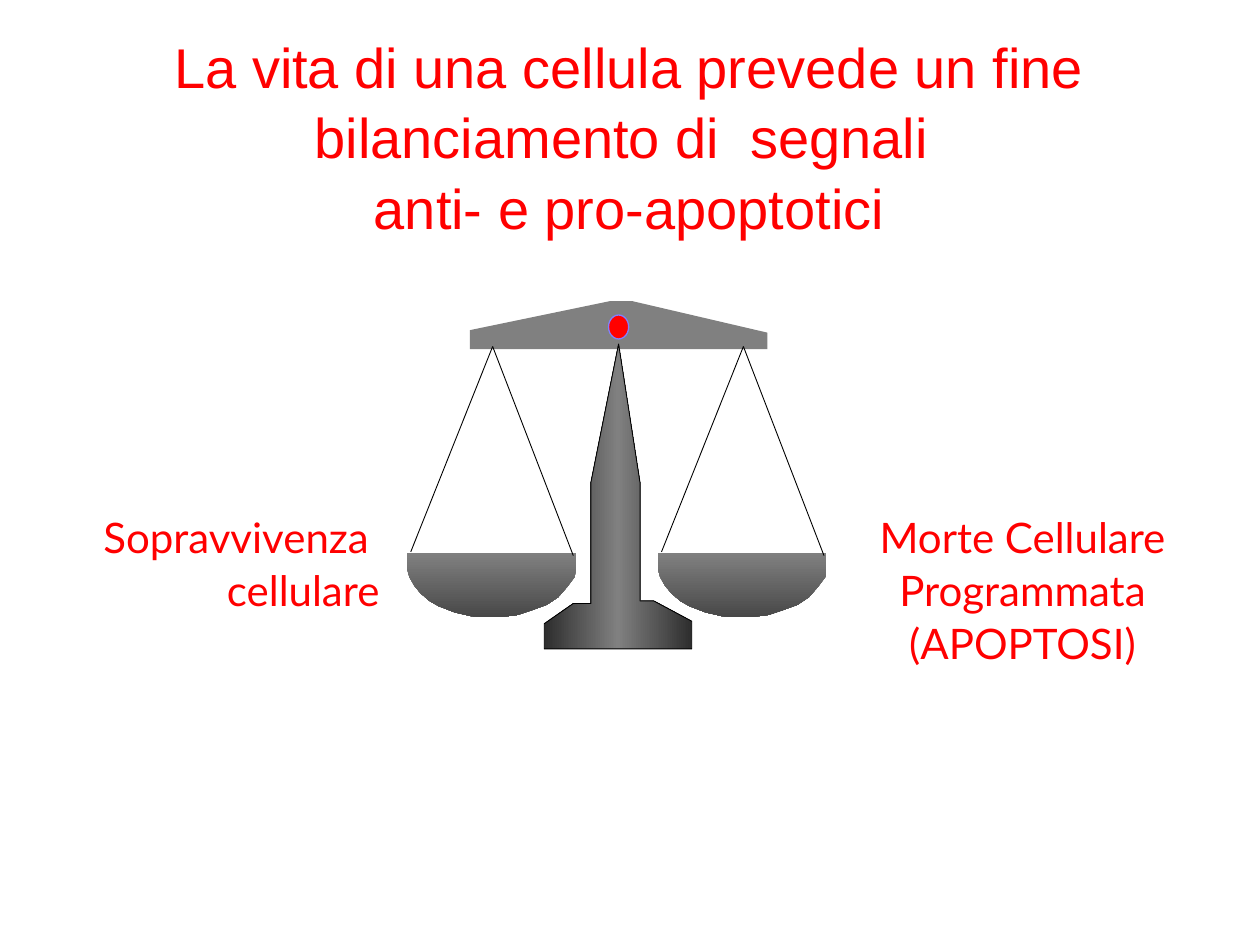
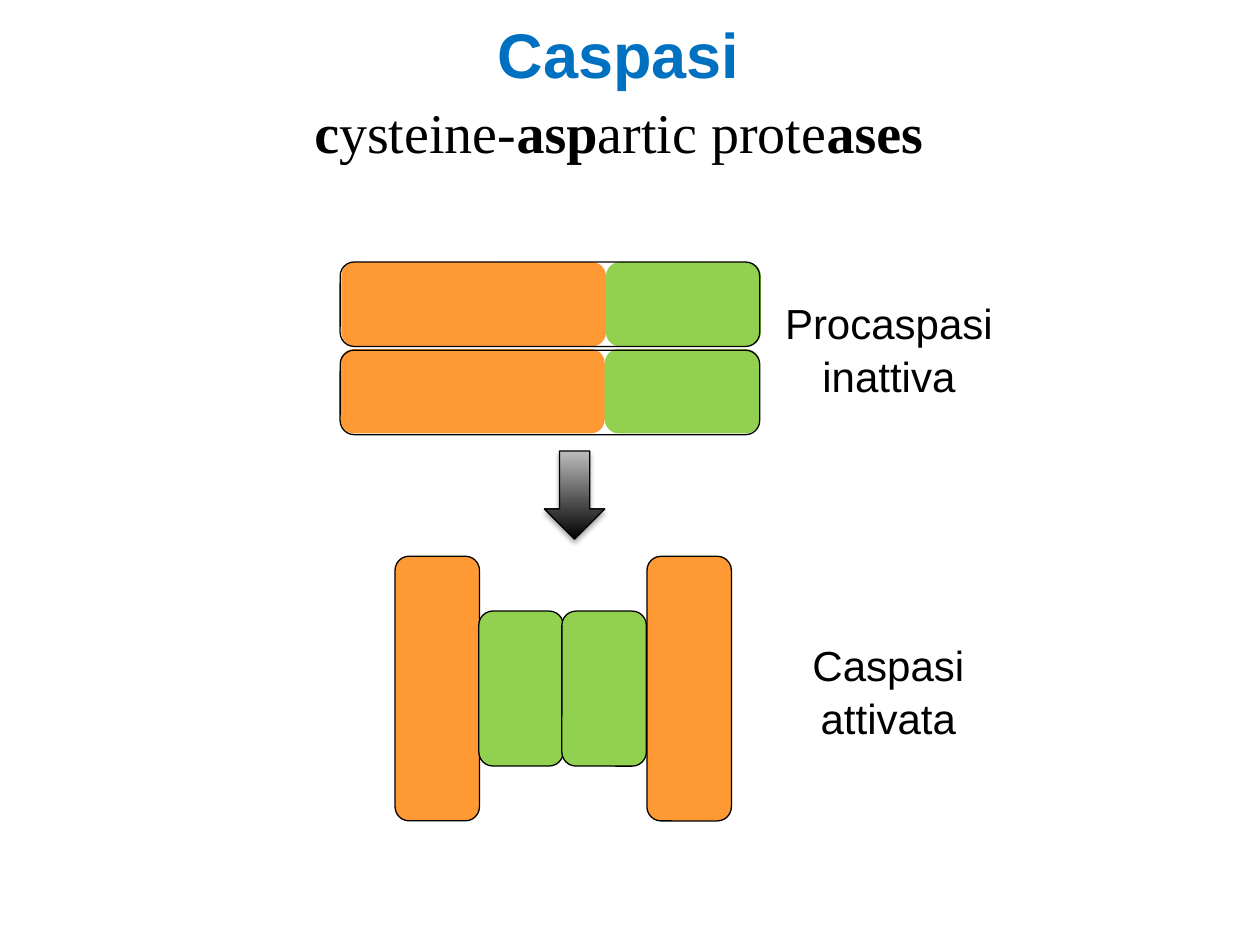
from pptx import Presentation
from pptx.dml.color import RGBColor
from pptx.enum.shapes import MSO_CONNECTOR, MSO_SHAPE as SHAPE
from pptx.enum.text import PP_ALIGN as ALIGN
from pptx.oxml import parse_xml
from pptx.oxml.ns import nsdecls, qn
from pptx.util import Emu, Pt

SCALE = 9144  # EMU in one px, at 100 px to the inch
RED, BLUE, BLACK = "FF0000", "0070C0", "000000"
GREY, ORANGE, GREEN = "808080", "FF9933", "92D050"

TITLE = {"name": "Arial", "size": Pt(32)}
HEADING = {"name": "Arial", "size": Pt(36), "bold": True}
SUBTITLE = {"name": "Times New Roman", "size": Pt(32)}
SIDE_LABEL = {"name": "Lato", "size": Pt(24)}
STATE_LABEL = {"name": "Arial", "size": Pt(24)}

METAL = ((0, "2E2E2E"), (50, GREY), (100, "2E2E2E"))
PAN_SHADE = ((0, GREY), (100, "484848"))
ARROW_SHADE = ((0, BLACK), (100, "BDBDBD"))


def px(value):
    return Emu(int(value * SCALE))


def rgb(code):
    return RGBColor.from_string(code)


def set_all(target, values):
    for name, value in values.items():
        setattr(target, name, value)


class Deck:
    """Holds the presentation, the current slide and the shared style."""

    def __init__(self, width, height):
        self.presentation = Presentation()
        set_all(self.presentation, {"slide_width": px(width), "slide_height": px(height)})

    def new_slide(self):
        layout = self.presentation.slide_layouts[6]
        self.shapes = self.presentation.slides.add_slide(layout).shapes

    def paint(self, shape, fill=None, line=None, weight=0.75, angle=0):
        """Fill with a hex colour or a tuple of gradient stops; None leaves it empty."""
        shape.shadow.inherit = False
        if isinstance(fill, str):
            shape.fill.solid()
            shape.fill.fore_color.rgb = rgb(fill)
        else:
            shape.fill.background()
            if fill:
                self.gradient(shape, fill, angle)
        if line:
            shape.line.color.rgb = rgb(line)
            shape.line.width = Pt(weight)
        else:
            shape.line.fill.background()
        return shape

    def gradient(self, shape, stops, angle):
        stop_xml = "".join(
            f'<a:gs pos="{position * 1000}"><a:srgbClr val="{code}"/></a:gs>'
            for position, code in stops)
        fill_xml = parse_xml(
            f'<a:gradFill {nsdecls("a")} rotWithShape="1"><a:gsLst>{stop_xml}</a:gsLst>'
            f'<a:lin ang="{angle * 60000}" scaled="0"/></a:gradFill>')
        properties = shape._element.spPr
        properties.replace(properties.find(qn("a:noFill")), fill_xml)

    def drop_shadow(self, shape, blur, distance, opacity):
        shape._element.spPr.find(qn("a:effectLst")).append(parse_xml(
            f'<a:outerShdw {nsdecls("a")} blurRad="{Pt(blur)}" dist="{Pt(distance)}" '
            f'dir="5400000" rotWithShape="0"><a:srgbClr val="{BLACK}">'
            f'<a:alpha val="{opacity * 1000}"/></a:srgbClr></a:outerShdw>'))

    def shape(self, kind, box, rotation=0, **look):
        shape = self.shapes.add_shape(kind, *map(px, box))
        shape.rotation = rotation
        return self.paint(shape, **look)

    def outline(self, points, **look):
        """Closed polygon through the points."""
        builder = self.shapes.build_freeform(*points[0], scale=SCALE)
        builder.add_line_segments(points[1:], close=True)
        return self.paint(builder.convert_to_shape(), **look)

    def line(self, start, end, color=BLACK, weight=0.5):
        connector = self.shapes.add_connector(
            MSO_CONNECTOR.STRAIGHT, *map(px, start + end))
        connector.line.color.rgb = rgb(color)
        connector.line.width = Pt(weight)
        connector._element.spPr.append(parse_xml(f'<a:effectLst {nsdecls("a")}/>'))

    def text(self, box, lines, font, color, align=ALIGN.CENTER, wrap=False):
        """Write one paragraph for each plain line."""
        self.rich_text(box, [(font, color, 1.05, [(line, {})]) for line in lines],
                       align, wrap)

    def rich_text(self, box, paragraphs, align=ALIGN.CENTER, wrap=False):
        """Each paragraph is (font, colour, line spacing, [(text, font changes)])."""
        frame = self.shapes.add_textbox(*map(px, box)).text_frame
        frame.word_wrap = wrap
        for index, (font, color, spacing, runs) in enumerate(paragraphs):
            paragraph = frame.add_paragraph() if index else frame.paragraphs[0]
            set_all(paragraph, {"alignment": align, "line_spacing": spacing})
            for content, changes in runs:
                run = paragraph.add_run()
                run.text = content
                set_all(run.font, {**font, **changes})
                run.font.color.rgb = rgb(color)


def build_balance_slide(deck):
    deck.new_slide()
    beam = [(373, 277), (609, 277), (609, 264), (502, 239), (484, 239), (373, 262)]
    column = [(491, 273), (508, 383), (508, 477), (519, 477), (549, 493), (549, 515),
              (432, 515), (432, 495), (455, 479), (469, 479), (469, 383)]
    pan = [(323, 439), (323, 451), (325, 458), (329, 465), (334, 471), (341, 477),
           (348, 481), (361, 486), (374, 489), (388, 490), (395, 490), (411, 488),
           (423, 484), (434, 480), (443, 474), (450, 466), (456, 458), (457, 453),
           (457, 439)]
    deck.outline(beam, fill=GREY)
    deck.shape(SHAPE.OVAL, (483, 250, 16, 19), fill=RED, line="8080FF")
    deck.outline(column, fill=METAL, line=BLACK, weight=0.5)
    for shift in (0, 199):
        deck.outline([(x + shift, y) for x, y in pan], fill=PAN_SHADE, angle=90)
        for x, y in ((455, 441), (326, 438)):
            deck.line((391 + shift, 275), (x + shift, y))

    deck.text((49, 399, 262, 90), ["Sopravvivenza ", "cellulare"],
              SIDE_LABEL, RED, ALIGN.RIGHT)
    deck.text((681, 399, 261, 130), ["Morte Cellulare", "Programmata", "(APOPTOSI)"],
              SIDE_LABEL, RED)
    deck.text((23, 18, 953, 172),
              ["La vita di una cellula prevede un fine bilanciamento di  segnali ",
               "anti- e pro-apoptotici"], TITLE, RED, wrap=True)


def build_caspase_slide(deck):
    deck.new_slide()
    bold = {"bold": True}
    deck.rich_text((237, 4, 508, 125), [
        (HEADING, BLUE, 1.05, [("Caspasi", {})]),
        (SUBTITLE, BLACK, 1.1, [("c", bold), ("ysteine-", {}), ("asp", bold),
                                ("artic prote", {}), ("ases", bold)])])
    deck.text((612, 229, 187, 91), ["Procaspasi", "inattiva"], STATE_LABEL, BLACK)
    deck.text((634, 501, 142, 91), ["Caspasi", "attivata"], STATE_LABEL, BLACK)

    arrow = deck.shape(SHAPE.DOWN_ARROW, (432, 358, 48, 70),
                       fill=ARROW_SHADE, angle=270, line=BLACK)
    deck.drop_shadow(arrow, blur=3.1, distance=1.8, opacity=35)

    large, small, thickness = 210, 123, 67
    for left, top in ((271, 208), (270, 277)):
        deck.shape(SHAPE.ROUNDED_RECTANGLE, (left, top, large, thickness), fill=ORANGE)
        deck.shape(SHAPE.ROUNDED_RECTANGLE, (left + large, top, small, thickness),
                   fill=GREEN)
    for top in (208, 278):
        deck.shape(SHAPE.ROUNDED_RECTANGLE, (270, top, large + small, thickness),
                   line=BLACK)

    active_subunits = ((242, large, ORANGE, 90), (352, small, GREEN, 90),
                       (442, large, ORANGE, 270), (418, small, GREEN, 270))
    for left, length, color, rotation in active_subunits:
        deck.shape(SHAPE.ROUNDED_RECTANGLE, (left, 513, length, thickness), rotation,
                   fill=color, line=BLACK)


def main():
    deck = Deck(1000, 750)
    build_balance_slide(deck)
    build_caspase_slide(deck)
    deck.presentation.save("out.pptx")


if __name__ == "__main__":
    main()
